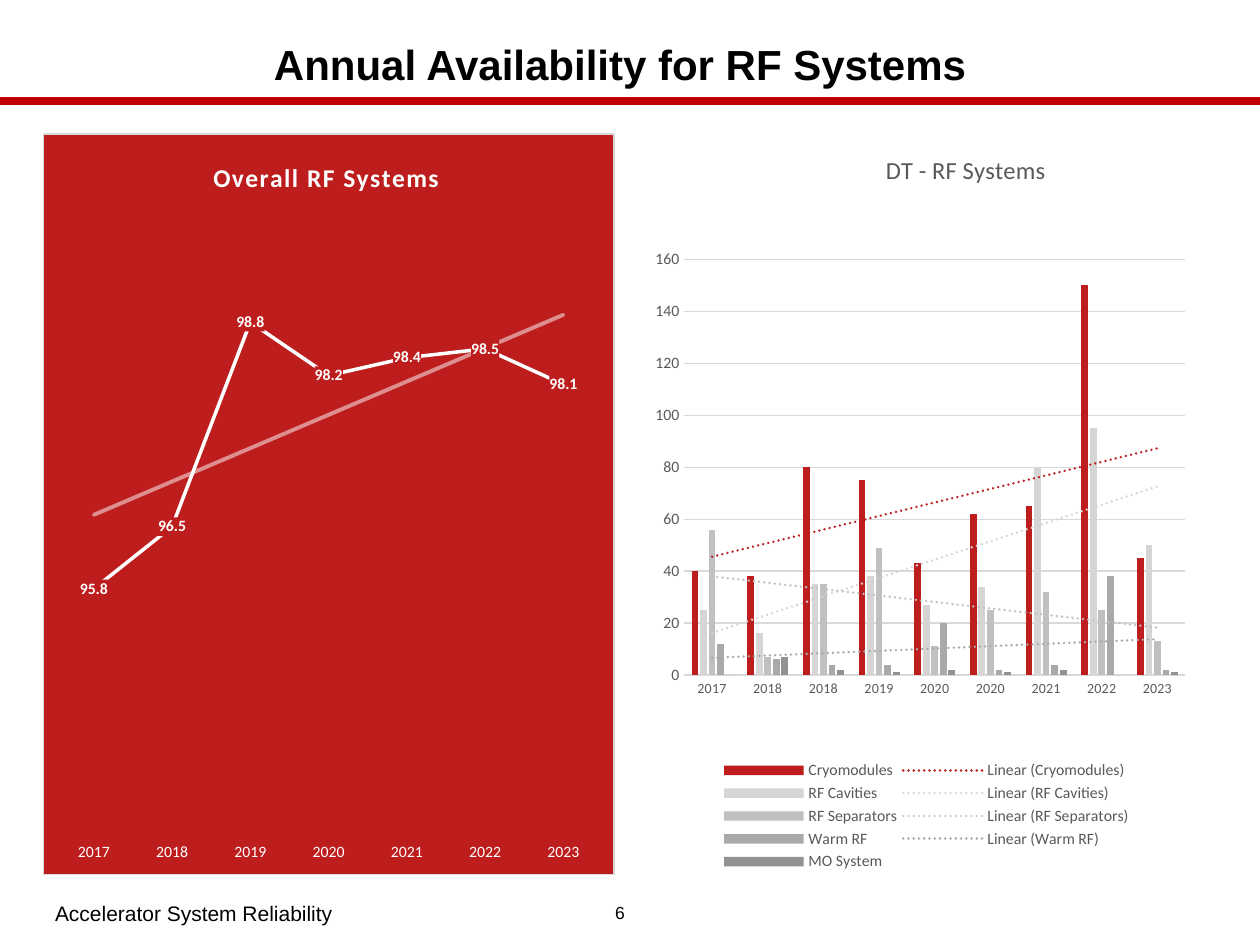
import pptx
import pptx.chart.data
import pptx.dml.color
import pptx.enum.chart
import pptx.enum.shapes
import pptx.enum.text
import pptx.oxml
import pptx.oxml.ns
import pptx.util
from pptx.util import Cm, Pt

THEME = {
    "rule": "C00000", "red": "BE1D1D", "white": "FFFFFF", "black": "000000",
    "grid": "D9D9D9", "label": "595959",
    "bars": ["BE1D1D", "D5D5D5", "C0C0C0", "A9A9A9", "929292"],
    "heading": 24, "bold_title": 14.6, "chart_title": 14, "footer": 12, "number": 10,
    "axis": 9, "small": 8,
    "text_font": "Arial", "chart_font": "Calibri",
}
RGB = pptx.dml.color.RGBColor.from_string
qn = pptx.oxml.ns.qn
NAMESPACES = pptx.oxml.ns.nsdecls("c", "a")


def place(element, x, y, width=None, height=None):
    """Give a chart title, legend or plot area a manual position."""
    for layout in element.findall(qn("c:layout")):
        element.remove(layout)
    inner = '<c:layoutTarget val="inner"/>' if element.tag == qn("c:plotArea") else ""
    size = f'<c:w val="{width}"/><c:h val="{height}"/>' if width else ""
    layout = pptx.oxml.parse_xml(
        f'<c:layout {NAMESPACES}><c:manualLayout>{inner}<c:xMode val="edge"/>'
        f'<c:yMode val="edge"/><c:x val="{x}"/><c:y val="{y}"/>{size}</c:manualLayout></c:layout>')
    before = [child for child in element if child.tag in (qn("c:tx"), qn("c:legendPos"))]
    element.insert(len(before), layout)


def add_trend(series, color, width, dash, opacity=100):
    """Add a linear trend line to a series."""
    trend = pptx.oxml.parse_xml(
        f'<c:trendline {NAMESPACES}><c:spPr><a:ln w="{Pt(width)}" cap="rnd"><a:solidFill>'
        f'<a:srgbClr val="{color}"><a:alpha val="{opacity * 1000}"/></a:srgbClr></a:solidFill>'
        f'<a:prstDash val="{dash}"/></a:ln></c:spPr><c:trendlineType val="linear"/>'
        '<c:dispRSqr val="0"/><c:dispEq val="0"/></c:trendline>')
    series._element.find(qn("c:cat")).addprevious(trend)


presentation = pptx.Presentation()
presentation.slide_width, presentation.slide_height = Cm(25.4), Cm(19.05)
slide = presentation.slides.add_slide(presentation.slide_layouts[6])

# Red rule under the heading
rule = slide.shapes.add_connector(
    pptx.enum.shapes.MSO_CONNECTOR.STRAIGHT, Cm(-0.03), Cm(2.03), Cm(25.4), Cm(2.03))
rule.line.color.rgb = RGB(THEME["rule"])
rule.line.width = Pt(4.5)
rule._element.spPr.append(pptx.oxml.parse_xml(f"<a:effectLst {NAMESPACES}/>"))

# Heading, footer and slide number
align = pptx.enum.text.PP_ALIGN
texts = [
    ("Annual Availability for RF Systems ", 0.86, 0.68, 23.52, 1.35, "heading", align.CENTER),
    ("Accelerator System Reliability", 0.86, 17.98, 10.87, 0.86, "footer", align.LEFT),
    ("6", 11.75, 17.98, 1.5, 0.84, "number", align.CENTER),
]
for text, left, top, width, height, role, alignment in texts:
    box = slide.shapes.add_textbox(Cm(left), Cm(top), Cm(width), Cm(height))
    frame = box.text_frame
    frame.word_wrap = True
    frame.vertical_anchor = pptx.enum.text.MSO_ANCHOR.MIDDLE
    frame.text = text
    paragraph = frame.paragraphs[0]
    paragraph.alignment = alignment
    if role == "heading":
        paragraph.line_spacing = 0.9
    font = paragraph.runs[0].font
    font.name, font.size, font.bold = THEME["text_font"], Pt(THEME[role]), role == "heading"
    font.color.rgb = RGB(THEME["black"])

# Both charts: data, title and category axis
chart_type = pptx.enum.chart.XL_CHART_TYPE
tick_mark = pptx.enum.chart.XL_TICK_MARK
availability = {"Series 1": [95.8, 96.5, 98.8, 98.2, 98.4, 98.5, 98.1]}
downtime = {
    "Cryomodules": [40, 38, 80, 75, 43, 62, 65, 150, 45],
    "RF Cavities": [25, 16, 35, 38, 27, 34, 80, 95, 50],
    "RF Separators": [56, 7, 35, 49, 11, 25, 32, 25, 13],
    "Warm RF": [12, 6, 4, 4, 20, 2, 4, 38, 2],
    "MO System": [0, 7, 2, 1, 2, 1, 2, 0, 1],
}
chart_specs = [
    ("Overall RF Systems", "bold_title", chart_type.LINE, 0.86, 11.53,
     "2017 2018 2019 2020 2021 2022 2023",
     availability, "white", "axis", (0.29, 0.03), (0.02, 0.11, 0.96, 0.84)),
    ("DT - RF Systems", "chart_title", chart_type.COLUMN_CLUSTERED, 13.0, 11.35,
     "2017 2018 2018 2019 2020 2020 2021 2022 2023",
     downtime, "label", "small", (0.42, 0.02), (0.07, 0.17, 0.89, 0.56)),
]
charts = []
for (title, title_size, kind, left, width, years,
     values, color, size, title_spot, plot_spot) in chart_specs:
    data = pptx.chart.data.CategoryChartData()
    data.categories = years.split()
    for name, numbers in values.items():
        data.add_series(name, numbers)
    chart = slide.shapes.add_chart(kind, Cm(left), Cm(2.69), Cm(width), Cm(14.96), data).chart
    chart.font.name, chart.font.size = THEME["chart_font"], Pt(10)
    chart.has_legend = False
    chart.plots[0].vary_by_categories = False

    chart.has_title = True
    chart.chart_title.text_frame.text = title
    font = chart.chart_title.text_frame.paragraphs[0].runs[0].font
    font.name, font.size = THEME["chart_font"], Pt(THEME[title_size])
    font.bold = kind == chart_type.LINE
    font.color.rgb = RGB(THEME[color])
    if kind == chart_type.LINE:
        font._element.set("spc", "100")
    place(chart.chart_title._element, *title_spot)
    place(chart._chartSpace.xpath(".//c:plotArea")[0], *plot_spot)

    axis = chart.category_axis
    axis.major_tick_mark = tick_mark.NONE
    axis.tick_labels.font.size = Pt(THEME[size])
    axis.tick_labels.font.color.rgb = RGB(THEME[color])
    charts.append(chart)
line_chart, column_chart = charts

# Availability line on a red panel
line_chart.category_axis.format.line.fill.background()
line_chart.value_axis.minimum_scale, line_chart.value_axis.maximum_scale = 93, 100
line_chart.value_axis.has_major_gridlines = False
line_chart.value_axis.visible = False
series = line_chart.plots[0].series[0]
series.smooth = False
series.marker.style = pptx.enum.chart.XL_MARKER_STYLE.NONE
series.format.line.color.rgb = RGB(THEME["white"])
series.format.line.width = Pt(2)
labels = series.data_labels
labels.show_value = True
labels.number_format, labels.number_format_is_linked = "0.0", False
labels.position = pptx.enum.chart.XL_LABEL_POSITION.CENTER
labels.font.size, labels.font.bold = Pt(THEME["axis"]), True
labels.font.color.rgb = RGB(THEME["white"])
add_trend(series, THEME["white"], 2.25, "solid", 50)

# Red fill for the panel and behind its data labels, so the line stays clear of the numbers
border = (f'<a:ln w="{Pt(0.75)}"><a:solidFill><a:srgbClr val="{THEME["grid"]}"/>'
          '</a:solidFill></a:ln>')
for element, outline in ((line_chart._chartSpace, border),
                         (labels._element, "<a:ln><a:noFill/></a:ln>")):
    element.find(qn("c:txPr")).addprevious(pptx.oxml.parse_xml(
        f'<c:spPr {NAMESPACES}><a:solidFill><a:srgbClr val="{THEME["red"]}"/></a:solidFill>'
        f'{outline}</c:spPr>'))

# Downtime columns, with trends for all but the last series
plot = column_chart.plots[0]
plot.gap_width, plot.overlap = 219, -27
for series, color in zip(plot.series, THEME["bars"]):
    series.format.fill.solid()
    series.format.fill.fore_color.rgb = RGB(color)
    if series.name != "MO System":
        add_trend(series, color, 1.5, "sysDot")
axis = column_chart.value_axis
axis.major_tick_mark = tick_mark.NONE
axis.format.line.fill.background()
axis.tick_labels.font.size = Pt(THEME["axis"])
axis.tick_labels.font.color.rgb = RGB(THEME["label"])
for line in (axis.major_gridlines.format.line, column_chart.category_axis.format.line):
    line.color.rgb = RGB(THEME["grid"])
    line.width = Pt(0.75)

# Legend below the columns
column_chart.has_legend = True
legend = column_chart.legend
legend.position = pptx.enum.chart.XL_LEGEND_POSITION.BOTTOM
legend.include_in_layout = False
legend.font.size = Pt(THEME["axis"])
legend.font.color.rgb = RGB(THEME["label"])
place(legend._element, 0.13, 0.84, 0.74, 0.16)

presentation.save("out.pptx")
